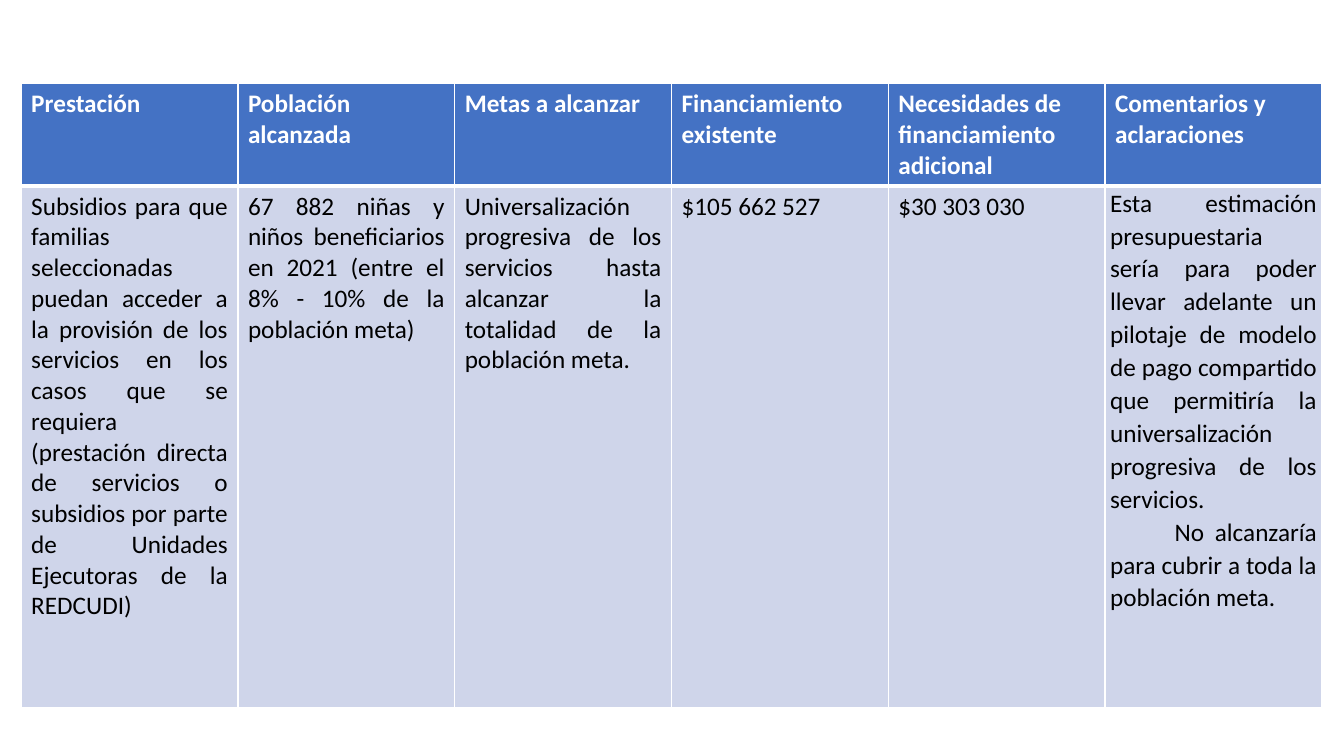
import lxml.etree
import pptx
import pptx.dml.color
import pptx.enum.text
import pptx.oxml.ns
import pptx.util

Inches = pptx.util.Inches
Pt = pptx.util.Pt

COLORS = {"header": "4472C4", "body": "CFD5EA", "white": "FFFFFF", "black": "000000"}
COLUMN_WIDTH = 2.15
ROW_HEIGHTS = (0.94, 5.17)
HEADERS = (
    "Prestación",
    "Población alcanzada",
    "Metas a alcanzar",
    "Financiamiento existente",
    "Necesidades de financiamiento adicional",
    "Comentarios y aclaraciones",
)
DETAILS = (
    "Subsidios para que familias seleccionadas puedan acceder a la provisión de los "
    "servicios en los casos que se requiera (prestación directa de servicios o "
    "subsidios por parte de Unidades Ejecutoras de la REDCUDI)",
    "67 882 niñas y niños beneficiarios en 2021 (entre el 8% - 10% de la población meta)",
    "Universalización progresiva de los servicios hasta alcanzar la totalidad de la "
    "población meta.",
    "$105 662 527",
    "$30 303 030",
    "Esta estimación presupuestaria sería para poder llevar adelante un pilotaje de "
    "modelo de pago compartido que permitiría la universalización progresiva de los "
    "servicios.\nNo alcanzaría para cubrir a toda la población meta.",
)


def set_borders(cell, top, bottom):
    """Draw white cell borders with the given top and bottom widths in points."""
    properties = cell._tc.get_or_add_tcPr()
    qn = pptx.oxml.ns.qn
    for side, width in (("L", 1), ("R", 1), ("T", top), ("B", bottom)):
        line = lxml.etree.SubElement(properties, qn(f"a:ln{side}"), w=str(Pt(width)))
        fill = lxml.etree.SubElement(line, qn("a:solidFill"))
        lxml.etree.SubElement(fill, qn("a:srgbClr"), val=COLORS["white"])


def fill_cell(cell, text, fill, color, bold=False, alignment=None):
    """Write the text of a cell and color it."""
    cell.fill.solid()
    cell.fill.fore_color.rgb = pptx.dml.color.RGBColor.from_string(COLORS[fill])
    cell.text = text
    for paragraph in cell.text_frame.paragraphs:
        paragraph.alignment = alignment
        paragraph.font.name = "Calibri"
        paragraph.font.size = Pt(18)
        paragraph.font.bold = bold
        paragraph.font.color.rgb = pptx.dml.color.RGBColor.from_string(COLORS[color])


def format_comment(cell):
    """Tighten the comment margins, open its lines and indent its last paragraph."""
    cell.margin_left = cell.margin_right = Inches(0.05)
    cell.margin_top = cell.margin_bottom = 0
    paragraphs = cell.text_frame.paragraphs
    for paragraph in paragraphs:
        paragraph.line_spacing = 1.07
    paragraphs[-1].space_after = Pt(8)
    paragraphs[-1]._p.get_or_add_pPr().set("indent", str(Inches(0.64)))


def add_benefits_table(slide):
    """Add the table of benefits, goals and funding."""
    table = slide.shapes.add_table(
        len(ROW_HEIGHTS), len(HEADERS), Inches(0.21), Inches(0.83),
        Inches(COLUMN_WIDTH * len(HEADERS)), Inches(sum(ROW_HEIGHTS)),
    ).table
    for row, height in zip(table.rows, ROW_HEIGHTS):
        row.height = Inches(height)
    justify = pptx.enum.text.PP_ALIGN.JUSTIFY
    for index, (header, detail) in enumerate(zip(HEADERS, DETAILS)):
        table.columns[index].width = Inches(COLUMN_WIDTH)
        header_cell, detail_cell = table.cell(0, index), table.cell(1, index)
        set_borders(header_cell, top=1, bottom=3)
        set_borders(detail_cell, top=3, bottom=1)
        fill_cell(header_cell, header, "header", "white", bold=True)
        fill_cell(detail_cell, detail, "body", "black", alignment=justify)
    format_comment(table.cell(1, len(HEADERS) - 1))


def main():
    """Build and save the slide."""
    presentation = pptx.Presentation()
    presentation.slide_width = Inches(13.33)
    presentation.slide_height = Inches(7.5)
    slide = presentation.slides.add_slide(presentation.slide_layouts[6])
    add_benefits_table(slide)
    presentation.save("out.pptx")


if __name__ == "__main__":
    main()
